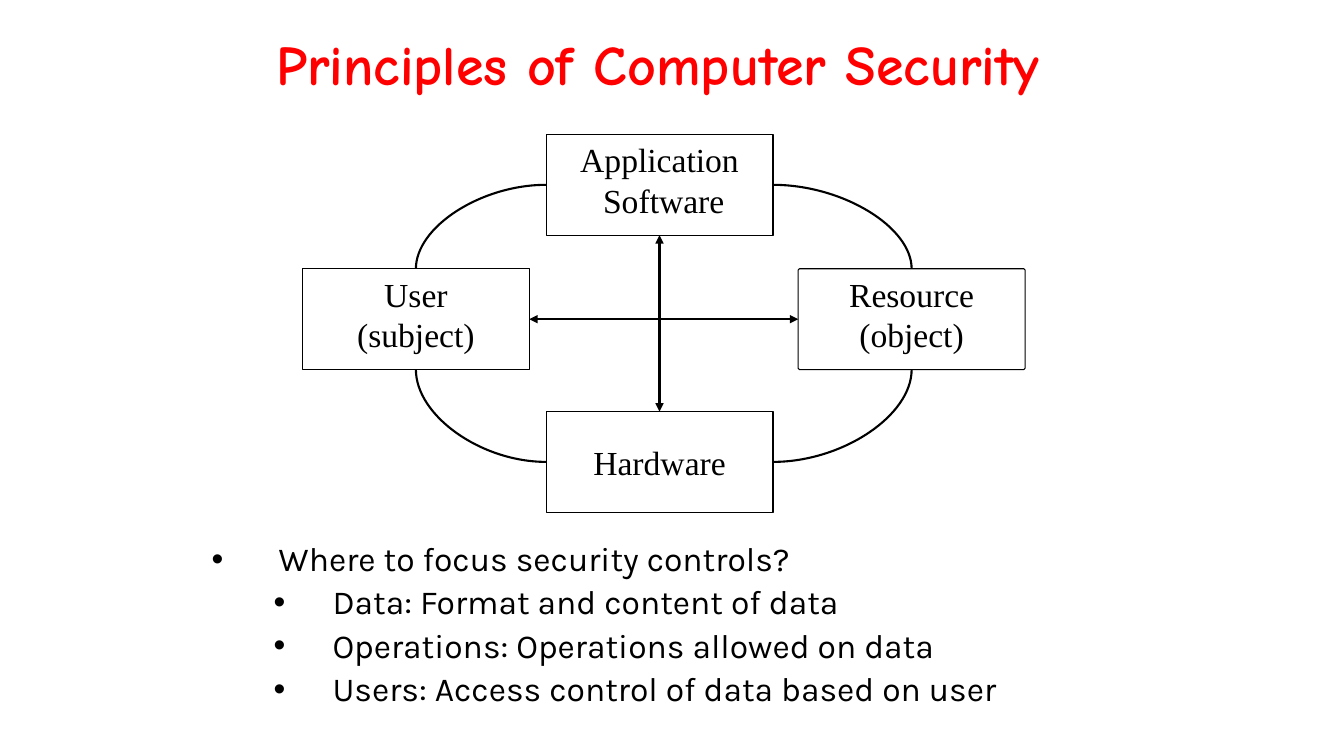
"""Builds a slide on the principles of computer security."""
from lxml.etree import SubElement
from pptx import Presentation
from pptx.dml.color import RGBColor
from pptx.enum.shapes import MSO_CONNECTOR, MSO_SHAPE
from pptx.enum.text import MSO_ANCHOR, PP_ALIGN
from pptx.oxml.ns import qn
from pptx.util import Inches, Pt

BLACK = RGBColor(0, 0, 0)
RED = RGBColor(255, 0, 0)

deck = Presentation()
deck.slide_width, deck.slide_height = Inches(13.33), Inches(7.5)
slide = deck.slides.add_slide(deck.slide_layouts[6])
UNIT = deck.slide_height / 90


def grid(*cells):
    return [round(cell * UNIT) for cell in cells]


def add_text(place, lines, font_name, size, color=BLACK, align=PP_ALIGN.CENTER, bold=False):
    frame = slide.shapes.add_textbox(*grid(*place)).text_frame
    frame.word_wrap = True
    for number, line in enumerate(lines):
        paragraph = frame.paragraphs[0] if number == 0 else frame.add_paragraph()
        paragraph.alignment = align
        run = paragraph.add_run()
        run.text = line
        run.font.name, run.font.size, run.font.bold = font_name, Pt(size), bold
        run.font.color.rgb = color
    return frame


focus = add_text((24, 64, 113, 21), [
    "Where to focus security controls?",
    "Data: Format and content of data",
    "Operations: Operations allowed on data",
    "Users: Access control of data based on user",
], "Karla", 24, align=PP_ALIGN.LEFT)
for number, point in enumerate(focus.paragraphs):
    level, margin, hanging = (1, 14.4, -7) if number else (0, 8, -8)
    point.level = level
    point.line_spacing = 0.9
    if level:
        point.space_before = Pt(5)
    properties = point._p.get_or_add_pPr()
    margin, hanging = grid(margin, hanging)
    properties.set("marL", str(margin))
    properties.set("indent", str(hanging))
    SubElement(properties, qn("a:buFont")).set("typeface", "Arial")
    SubElement(properties, qn("a:buChar")).set("char", "•")

title = add_text((26, 0, 107, 15), ["Principles of Computer Security "],
                 "Comic Neue", 40, RED, bold=True)
title.vertical_anchor = MSO_ANCHOR.MIDDLE

components = [
    (95, 32, 0.012, (98, 32, 21, 11), ["Resource", "(object)"]),
    (36, 32, 0, (40, 32, 19, 11), ["User", "(subject)"]),
    (65, 16, 0, (67, 16, 24, 11), ["Application ", "Software"]),
    (65, 49, 0, (69, 52, 19, 6), ["Hardware"]),
]
for left, top, corner, label_place, label in components:
    component = slide.shapes.add_shape(MSO_SHAPE.OCTAGON, *grid(left, top, 27, 12))
    component.adjustments[0] = corner
    component.shadow.inherit = False
    component.fill.background()
    component.line.color.rgb, component.line.width = BLACK, Pt(0.75)
    add_text(label_place, label, "Times New Roman", 24)

links = [
    (63, 38, 95, 38, False),
    (78.5, 28, 78.5, 49, False),
    (65, 22, 49.5, 32, True),
    (92, 22, 108.5, 32, True),
    (65, 55, 49.5, 44, True),
    (92, 55, 108.5, 44, True),
]
for *ends, curved in links:
    kind = MSO_CONNECTOR.CURVE if curved else MSO_CONNECTOR.STRAIGHT
    link = slide.shapes.add_connector(kind, *grid(*ends))
    link.line.color.rgb, link.line.width = BLACK, Pt(1.5)
    shape_properties = link._element.spPr
    if curved:
        shape_properties.find(qn("a:prstGeom")).set("prst", "curvedConnector2")
    else:
        for arrow in ("a:headEnd", "a:tailEnd"):
            SubElement(link.line._get_or_add_ln(), qn(arrow)).set("type", "triangle")
    SubElement(shape_properties, qn("a:effectLst"))

deck.save("out.pptx")
